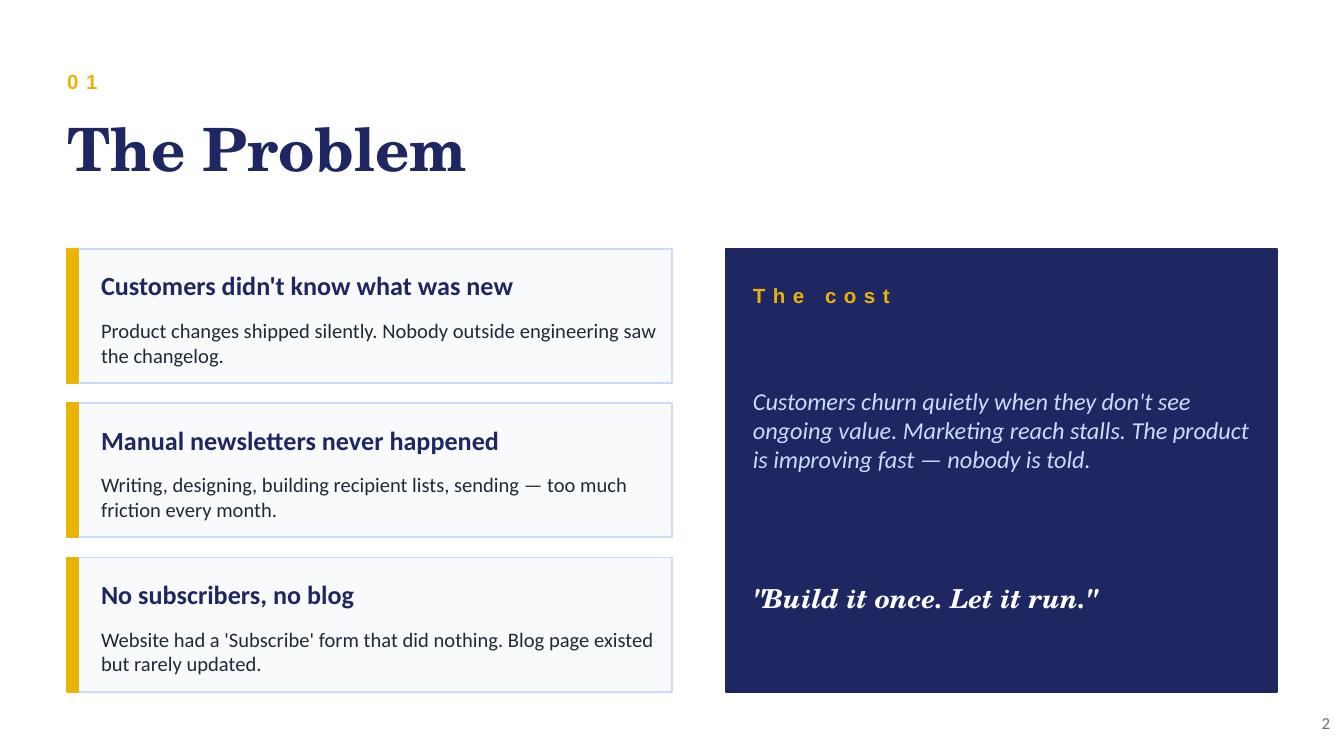
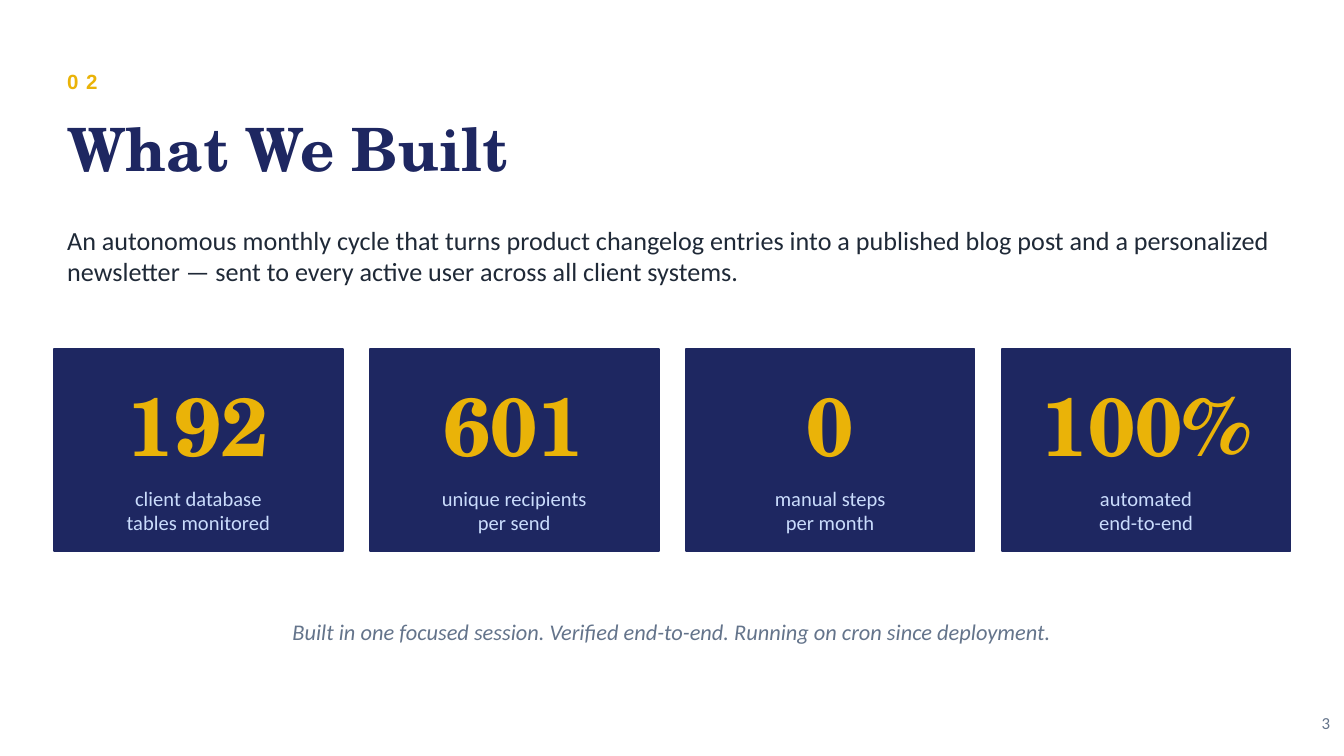
from pptx import Presentation
from pptx.dml.color import RGBColor
from pptx.enum.shapes import MSO_SHAPE
from pptx.enum.text import MSO_ANCHOR, PP_ALIGN
from pptx.util import Cm, Pt

RECT = MSO_SHAPE.RECTANGLE
MIDDLE = MSO_ANCHOR.MIDDLE
LEFT, CENTER, RIGHT = PP_ALIGN.LEFT, PP_ALIGN.CENTER, PP_ALIGN.RIGHT

NAVY = RGBColor(0x1E, 0x27, 0x61)
GOLD = RGBColor(0xEA, 0xB3, 0x08)
ICE = RGBColor(0xCA, 0xDC, 0xFC)
PALE = RGBColor(0xF8, 0xFA, 0xFC)
INK = RGBColor(0x1F, 0x29, 0x37)
SLATE = RGBColor(0x64, 0x74, 0x8B)
WHITE = RGBColor(0xFF, 0xFF, 0xFF)

SANS, SERIF, LABEL = "Calibri", "TeX Gyre Schola", "Arial"
MARGIN, WIDTH = 1.27, 22.86

PAINS = [
    ("Customers didn't know what was new",
     "Product changes shipped silently. Nobody outside engineering saw the changelog."),
    ("Manual newsletters never happened",
     "Writing, designing, building recipient lists, sending — too much friction every month."),
    ("No subscribers, no blog",
     "Website had a 'Subscribe' form that did nothing. Blog page existed but rarely updated."),
]
STATS = [
    ("192", ["client database", "tables monitored"]),
    ("601", ["unique recipients", "per send"]),
    ("0", ["manual steps", "per month"]),
    ("100%", ["automated", "end-to-end"]),
]


def add_rect(slide, box, fill, line):
    shape = slide.shapes.add_shape(RECT, *map(Cm, box))
    shape.shadow.inherit = False
    shape.fill.solid()
    shape.fill.fore_color.rgb = fill
    shape.line.color.rgb = line
    shape.line.width = Pt(1)


def add_text(slide, box, lines, size, color, face=SANS, bold=False,
             italic=False, align=LEFT, track=0):
    frame = slide.shapes.add_textbox(*map(Cm, box)).text_frame
    frame.word_wrap = True
    frame.vertical_anchor = MIDDLE
    frame.margin_left = frame.margin_right = 0
    frame.margin_top = frame.margin_bottom = 0
    for index, line in enumerate(lines):
        para = frame.add_paragraph() if index else frame.paragraphs[0]
        para.alignment = align
        run = para.add_run()
        run.text = line
        font = run.font
        font.name, font.size = face, Pt(size)
        font.bold, font.italic = bold, italic
        font.color.rgb = color
        if track:
            run._r.get_or_add_rPr().set("spc", str(track * 100))


def add_label(slide, box, text):
    add_text(slide, box, [text], 11, GOLD, LABEL, bold=True, track=4)


def add_frame(deck, number, title, page):
    slide = deck.slides.add_slide(deck.slide_layouts[6])
    slide.background.fill.solid()
    slide.background.fill.fore_color.rgb = WHITE
    add_label(slide, (MARGIN, 1.02, 2.03, 1.02), number)
    add_text(slide, (MARGIN, 1.9, WIDTH, 1.78), [title], 32, NAVY, SERIF, bold=True)
    add_text(slide, (24.38, 13.34, 0.76, 0.64), [page], 9, SLATE, align=RIGHT)
    return slide


def add_card(slide, box, head, body):
    x, y, w, h = box
    inset = 0.64
    add_rect(slide, box, PALE, ICE)
    add_rect(slide, (x, y, 0.2, h), GOLD, GOLD)
    wide = w - inset - 0.25
    add_text(slide, (x + inset, y + 0.25, wide, 0.89), [head], 14, NAVY, bold=True)
    add_text(slide, (x + inset, y + 1.14, wide, 1.27), [body], 11, INK)


def add_panel(slide, box):
    x, y, w, h = box
    pad = 0.51
    left, wide = x + pad, w - 2 * pad
    add_rect(slide, box, NAVY, NAVY)
    add_label(slide, (left, y + 0.38, wide, 1.02), "The cost")
    add_text(slide, (left, y + 1.52, wide, 3.81),
             ["Customers churn quietly when they don't see ongoing value. "
              "Marketing reach stalls. The product is improving fast — nobody is told."],
             13, ICE, italic=True)
    add_text(slide, (left, y + 6.1, wide, 1.02), ['"Build it once. Let it run."'],
             14, WHITE, SERIF, bold=True, italic=True)


def add_tile(slide, box, value, lines):
    x, y, w, h = box
    pad = 0.38
    add_rect(slide, box, NAVY, NAVY)
    add_text(slide, (x, y + 0.51, w, 1.78), [value], 44, GOLD, SERIF,
             bold=True, align=CENTER)
    add_text(slide, (x + pad, y + 2.41, w - 2 * pad, 1.27), lines, 11, ICE, align=CENTER)


def build_pains(deck):
    slide = add_frame(deck, "01", "The Problem", "2")
    top, high, gap = 4.7, 2.54, 0.38
    for row, (head, body) in enumerate(PAINS):
        y = top + row * (high + gap)
        add_card(slide, (MARGIN, y, 11.43, high), head, body)
    add_panel(slide, (13.72, top, 10.41, 3 * high + 2 * gap))


def build_stats(deck):
    slide = add_frame(deck, "02", "What We Built", "3")
    add_text(slide, (MARGIN, 3.94, WIDTH, 1.78),
             ["An autonomous monthly cycle that turns product changelog entries into "
              "a published blog post and a personalized newsletter — sent to every "
              "active user across all client systems."], 14, INK)
    wide, gap = 5.46, 0.51
    for col, (value, lines) in enumerate(STATS):
        x = 1.02 + col * (wide + gap)
        add_tile(slide, (x, 6.6, wide, 3.81), value, lines)
    add_text(slide, (MARGIN, 11.43, WIDTH, 1.02),
             ["Built in one focused session. Verified end-to-end. "
              "Running on cron since deployment."],
             12, SLATE, italic=True, align=CENTER)


def main():
    deck = Presentation()
    deck.slide_width, deck.slide_height = Cm(25.4), Cm(14.29)
    build_pains(deck)
    build_stats(deck)
    deck.save("out.pptx")


if __name__ == "__main__":
    main()
